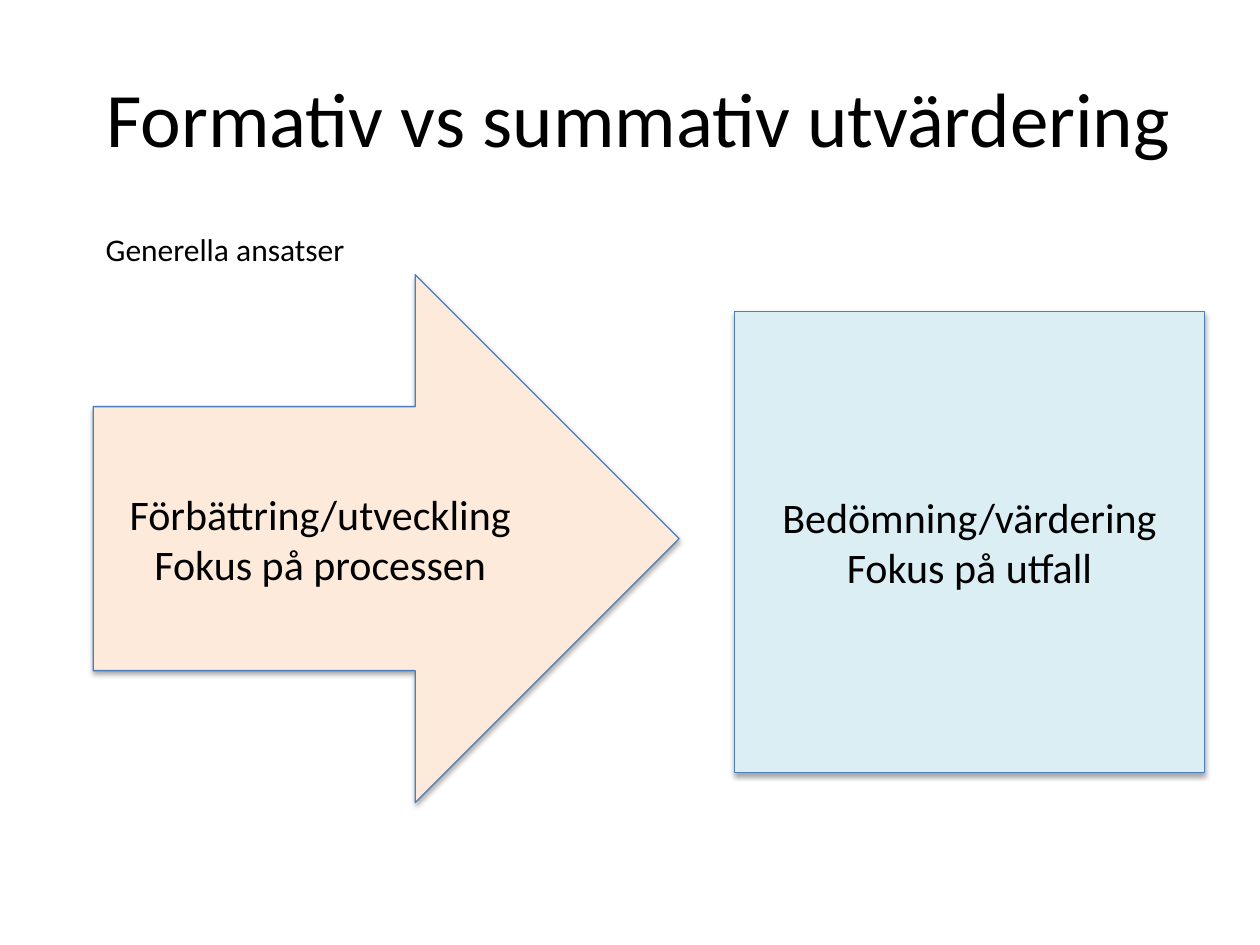
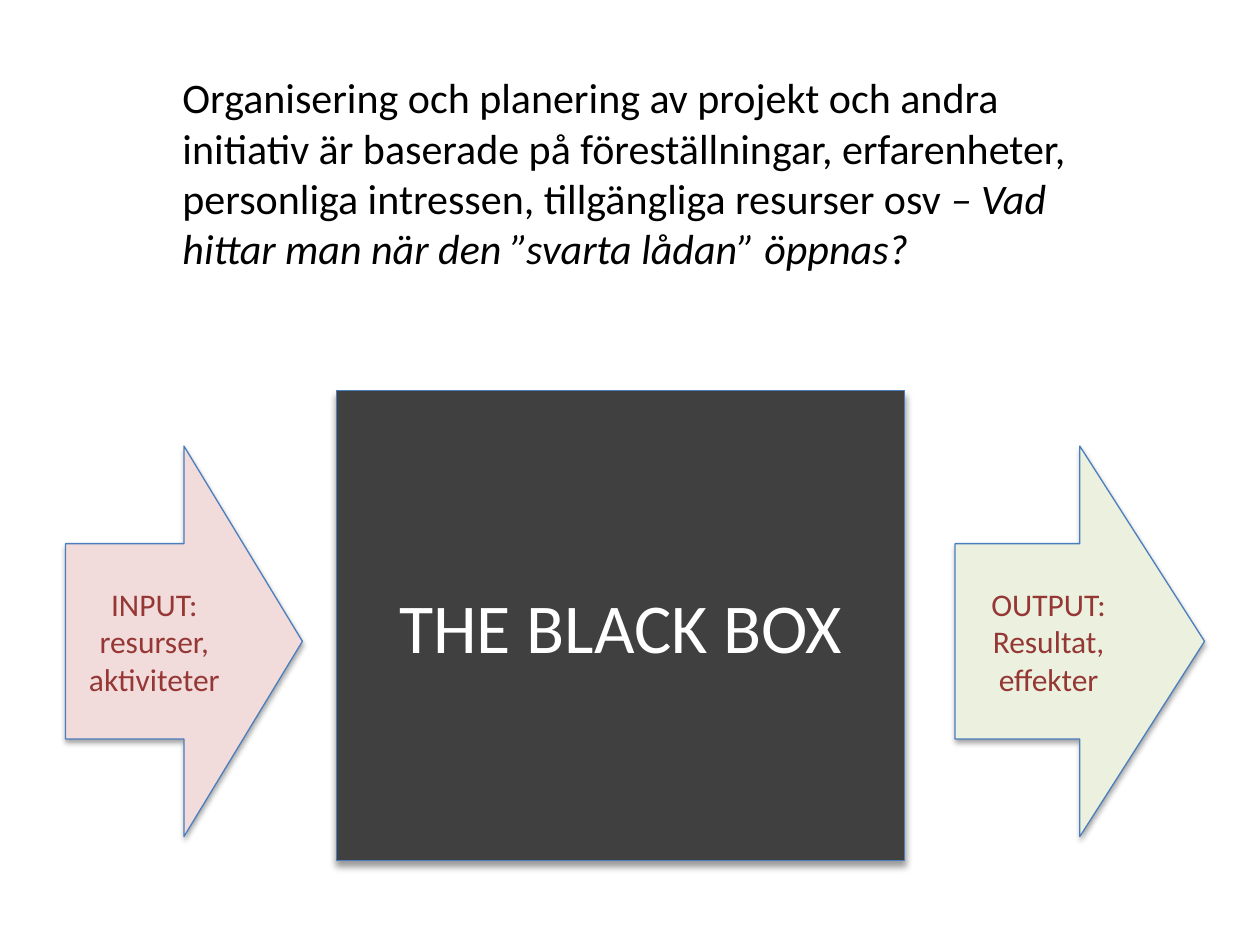
from lxml import etree
from pptx import Presentation
from pptx.dml.color import RGBColor
from pptx.enum.shapes import MSO_SHAPE
from pptx.enum.text import MSO_ANCHOR, MSO_AUTO_SIZE, PP_ALIGN
from pptx.oxml.ns import qn
from pptx.util import Inches, Pt

RECT, ARROW = MSO_SHAPE.RECTANGLE, MSO_SHAPE.RIGHT_ARROW
LEFT, CENTER = PP_ALIGN.LEFT, PP_ALIGN.CENTER
MIDDLE = MSO_ANCHOR.MIDDLE
GROW = MSO_AUTO_SIZE.SHAPE_TO_FIT_TEXT

FONT = "Calibri"
BLACK = RGBColor(0x00, 0x00, 0x00)
WHITE = RGBColor(0xFF, 0xFF, 0xFF)
OUTLINE = RGBColor(0x4B, 0x7E, 0xBC)
PALE_BLUE = RGBColor(0xDB, 0xEE, 0xF4)
PALE_ORANGE = RGBColor(0xFD, 0xEA, 0xDA)
PALE_RED = RGBColor(0xF2, 0xDC, 0xDB)
PALE_GREEN = RGBColor(0xEB, 0xF1, 0xDE)
DARK_GREY = RGBColor(0x40, 0x40, 0x40)
DARK_RED = RGBColor(0x95, 0x37, 0x35)

# Shadow settings: blur (pt), distance (pt), opacity (%)
SOFT_SHADOW = (3.1, 1.8, 35)
DEEP_SHADOW = (4, 3, 40)


def write(tf, text, size=24, color=BLACK, align=CENTER, italic_end=""):
    """Write one paragraph per line, with an optional italic ending."""
    for i, line in enumerate(text.split("\n")):
        p = tf.paragraphs[0] if i == 0 else tf.add_paragraph()
        p.alignment = align
        p.add_run().text = line
    if italic_end:
        r = p.add_run()
        r.text = italic_end
        r.font.italic = True
    for p in tf.paragraphs:
        for r in p.runs:
            r.font.name = FONT
            r.font.size = Pt(size)
            r.font.color.rgb = color


def add_box(s, kind, at, fill, text, shadow=SOFT_SHADOW, **text_format):
    """Add an outlined shape with a downward shadow and centred text."""
    sp = s.shapes.add_shape(kind, *map(Inches, at))
    sp.fill.solid()
    sp.fill.fore_color.rgb = fill
    sp.line.color.rgb = OUTLINE
    sp.line.width = Pt(0.75)
    blur, distance, opacity = shadow
    effects = etree.SubElement(sp.element.spPr, qn("a:effectLst"))
    outer = etree.SubElement(effects, qn("a:outerShdw"), blurRad=str(Pt(blur)),
                             dist=str(Pt(distance)), dir="5400000", rotWithShape="0")
    color = etree.SubElement(outer, qn("a:srgbClr"), val=str(BLACK))
    etree.SubElement(color, qn("a:alpha"), val=str(opacity * 1000))
    sp.text_frame.word_wrap = True
    sp.text_frame.vertical_anchor = MIDDLE
    write(sp.text_frame, text, **text_format)


prs = Presentation()
prs.slide_width, prs.slide_height = Inches(10), Inches(7.5)

# Slide 1: formative and summative evaluation
s = prs.slides.add_slide(prs.slide_layouts[5])
title = s.shapes.title
title.left, title.top, title.width, title.height = map(Inches, (0.57, 0.3, 9, 1.25))
title.text_frame.vertical_anchor = MIDDLE
write(title.text_frame, "Formativ vs summativ utvärdering", size=44)

add_box(s, RECT, (5.83, 2.47, 3.73, 3.66), PALE_BLUE,
        "Bedömning/värdering\nFokus på utfall")
add_box(s, ARROW, (0.74, 2.18, 4.65, 4.19), PALE_ORANGE,
        "Förbättring/utveckling\nFokus på processen")

label = s.shapes.add_textbox(*map(Inches, (0.74, 1.78, 2.12, 0.4)))
label.text_frame.word_wrap = False
label.text_frame.auto_size = GROW
write(label.text_frame, "Generella ansatser", size=18, align=LEFT)

# Slide 2: the black box between input and output
s = prs.slides.add_slide(prs.slide_layouts[6])
add_box(s, RECT, (2.67, 3.1, 4.51, 3.73), DARK_GREY, "THE BLACK BOX",
        shadow=DEEP_SHADOW, size=40, color=WHITE)
for left, width, fill, text in (
    (0.52, 1.88, PALE_RED, "INPUT:\nresurser, aktiviteter"),
    (7.58, 1.98, PALE_GREEN, "OUTPUT:\nResultat, effekter"),
):
    add_box(s, ARROW, (left, 3.54, width, 3.1), fill, text, size=18, color=DARK_RED)

intro = s.shapes.add_textbox(*map(Inches, (1.35, 0.52, 7.23, 2.12)))
intro.text_frame.word_wrap = True
intro.text_frame.auto_size = GROW
write(intro.text_frame,
      "Organisering och planering av projekt och andra initiativ är baserade på "
      "föreställningar, erfarenheter, personliga intressen, tillgängliga resurser osv ",
      align=LEFT, italic_end="– Vad hittar man när den ”svarta lådan” öppnas?")

prs.save("out.pptx")
